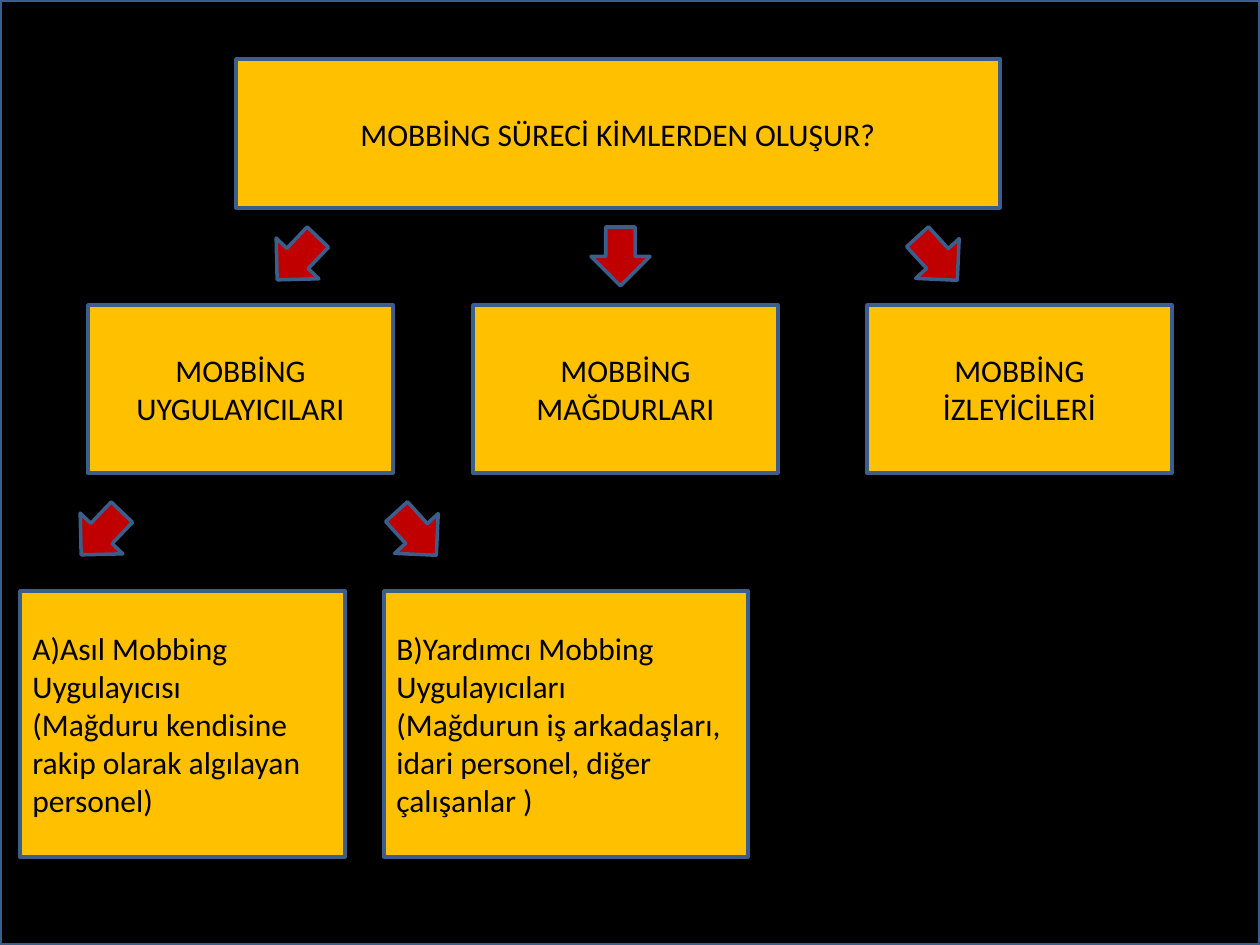
from pptx import Presentation
from pptx.dml.color import RGBColor
from pptx.enum.shapes import MSO_SHAPE
from pptx.enum.text import MSO_ANCHOR, PP_ALIGN
from pptx.util import Emu, Pt

PX = 914400 // 126
WIDTH, HEIGHT = 1260, 945
BLACK, AMBER, RED, BLUE = "000000", "FFC000", "C00000", "3A5F8C"

# Content: each row has top, height, alignment and (left, width, text) boxes
ROWS = [
    (59, 149, PP_ALIGN.CENTER, [
        (236, 764, "MOBBİNG SÜRECİ KİMLERDEN OLUŞUR?"),
    ]),
    (305, 168, PP_ALIGN.CENTER, [
        (88, 305, "MOBBİNG UYGULAYICILARI"),
        (473, 305, "MOBBİNG MAĞDURLARI"),
        (867, 305, "MOBBİNG İZLEYİCİLERİ"),
    ]),
    (591, 266, PP_ALIGN.LEFT, [
        (20, 325, "A)Asıl Mobbing Uygulayıcısı\n"
                  "(Mağduru kendisine rakip olarak algılayan personel)"),
        (384, 364, "B)Yardımcı Mobbing Uygulayıcıları\n"
                   "(Mağdurun iş arkadaşları, idari personel, diğer çalışanlar )"),
    ]),
]

# Arrows: left, top, rotation
ARROW_SIZE = 59
TO_LEFT, TO_RIGHT = 43.6, 317.6
ARROWS = [
    (72, 504, TO_LEFT), (387, 504, TO_RIGHT),
    (268, 229, TO_LEFT), (908, 229, TO_RIGHT), (591, 227, 0),
]


def px(n):
    return Emu(n * PX)


def color(value):
    return RGBColor.from_string(value)


def add_shape(s, kind, left, top, width, height, fill):
    sp = s.shapes.add_shape(kind, px(left), px(top), px(width), px(height))
    sp.shadow.inherit = False
    sp.fill.solid()
    sp.fill.fore_color.rgb = color(fill)
    sp.line.color.rgb = color(BLUE)
    sp.line.width = Pt(2)
    return sp


def set_text(sp, text, align):
    tf = sp.text_frame
    tf.word_wrap = True
    tf.vertical_anchor = MSO_ANCHOR.MIDDLE
    tf.text = text
    for p in tf.paragraphs:
        p.alignment = align
        for r in p.runs:
            r.font.name = "Calibri"
            r.font.size = Pt(18)
            r.font.color.rgb = color(BLACK)


def main():
    prs = Presentation()
    prs.slide_width, prs.slide_height = px(WIDTH), px(HEIGHT)
    s = prs.slides.add_slide(prs.slide_layouts[6])

    # Backdrop
    add_shape(s, MSO_SHAPE.RECTANGLE, 0, 0, WIDTH, HEIGHT, BLACK)

    # Boxes
    for top, height, align, boxes in ROWS:
        for left, width, text in boxes:
            sp = add_shape(s, MSO_SHAPE.RECTANGLE, left, top, width, height, AMBER)
            set_text(sp, text, align)

    # Arrows
    for left, top, rotation in ARROWS:
        sp = add_shape(s, MSO_SHAPE.DOWN_ARROW, left, top, ARROW_SIZE, ARROW_SIZE, RED)
        sp.rotation = rotation

    prs.save("out.pptx")


if __name__ == "__main__":
    main()
